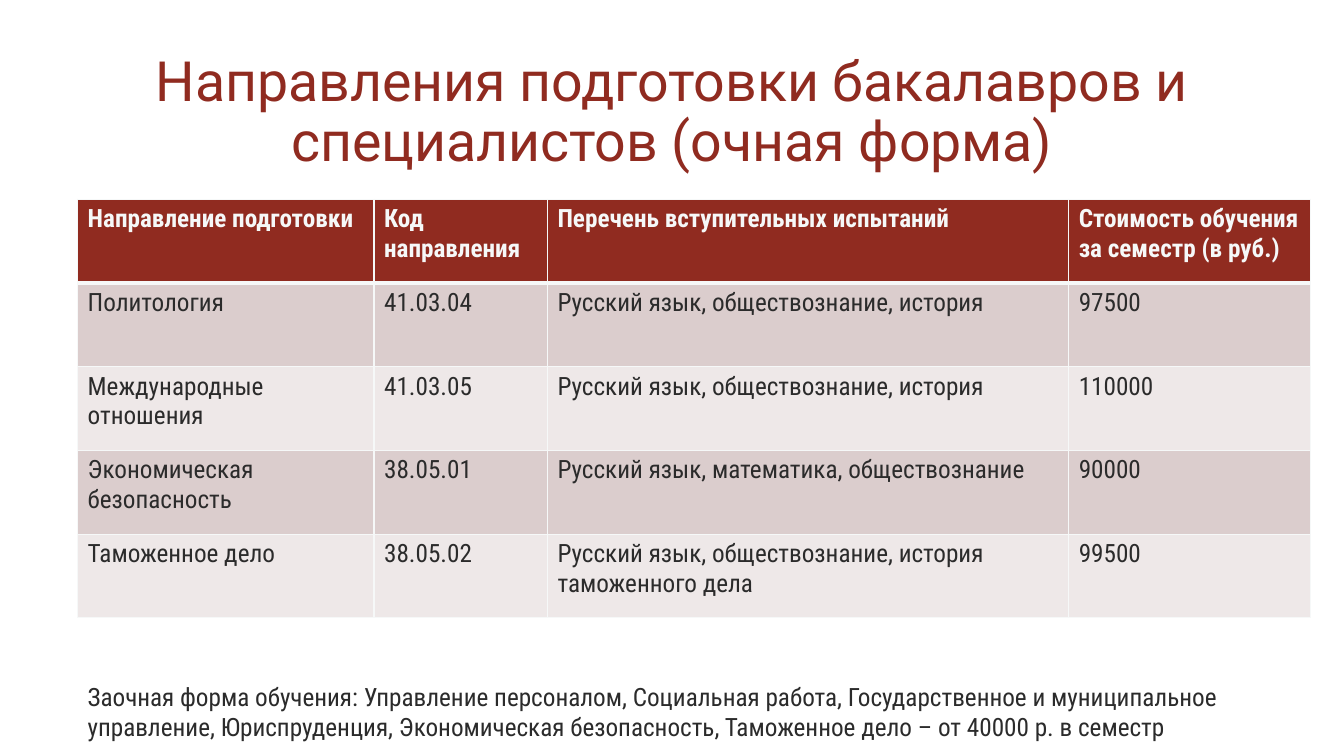
"""Builds the slide listing full-time degree programmes and their fees."""
import pptx
import pptx.dml.color
import pptx.enum.text
import pptx.oxml
import pptx.oxml.ns
import pptx.util

Inches = pptx.util.Inches
Pt = pptx.util.Pt

COLORS = {
    "accent": "902B20",
    "text": "2B2B2B",
    "light": "F6F8F8",
    "odd_row": "DBCDCD",
    "even_row": "EEE8E8",
}
TITLE_FONT = "Roboto"
BODY_FONT = "Roboto Condensed"

TITLE = "Направления подготовки бакалавров и специалистов (очная форма)"
PROGRAMMES = [
    ("Направление подготовки", "Код направления", "Перечень вступительных испытаний",
     "Стоимость обучения за семестр (в руб.)"),
    ("Политология", "41.03.04", "Русский язык, обществознание, история", "97500"),
    ("Международные отношения", "41.03.05", "Русский язык, обществознание, история", "110000"),
    ("Экономическая безопасность", "38.05.01", "Русский язык, математика, обществознание", "90000"),
    ("Таможенное дело", "38.05.02", "Русский язык, обществознание, история таможенного дела",
     "99500"),
]
COLUMN_WIDTHS = [2.94, 1.72, 5.17, 2.4]
ROW_HEIGHT = 0.83
CORRESPONDENCE_NOTE = [
    "Заочная форма обучения: Управление персоналом, Социальная работа, "
    "Государственное и муниципальное",
    "управление, Юриспруденция, Экономическая безопасность, "
    "Таможенное дело – от 40000 р. в семестр",
]


def rgb(name):
    return pptx.dml.color.RGBColor.from_string(COLORS[name])


def add_run(paragraph, text, color, size=18, font=BODY_FONT, bold=False):
    run = paragraph.add_run()
    run.text = text
    run.font.name = font
    run.font.size = Pt(size)
    run.font.bold = bold
    run.font.color.rgb = rgb(color)


def set_borders(cell, bottom_width):
    properties = cell._tc.get_or_add_tcPr()
    for side, width in (("L", 1), ("R", 1), ("T", 1), ("B", bottom_width)):
        properties.append(pptx.oxml.parse_xml(
            f'<a:ln{side} {pptx.oxml.ns.nsdecls("a")} w="{Pt(width)}"><a:solidFill>'
            f'<a:srgbClr val="{COLORS["light"]}"/></a:solidFill></a:ln{side}>'))


def add_title(slide):
    title = slide.shapes.title
    title.left, title.top = Inches(1), Inches(0.68)
    title.width, title.height = Inches(11.33), Inches(0.89)
    frame = title.text_frame
    frame.margin_left = frame.margin_right = frame.margin_top = frame.margin_bottom = 0
    frame.vertical_anchor = pptx.enum.text.MSO_ANCHOR.MIDDLE
    frame.auto_size = pptx.enum.text.MSO_AUTO_SIZE.NONE
    frame.word_wrap = True
    heading = frame.paragraphs[0]
    heading.alignment = pptx.enum.text.PP_ALIGN.CENTER
    heading.line_spacing = 0.9
    add_run(heading, TITLE, "accent", 39.6, TITLE_FONT)


def add_programme_table(slide):
    programmes = slide.shapes.add_table(
        len(PROGRAMMES), len(COLUMN_WIDTHS), Inches(0.77), Inches(1.98),
        Inches(sum(COLUMN_WIDTHS)), Inches(ROW_HEIGHT * len(PROGRAMMES))).table
    for column, width in zip(programmes.columns, COLUMN_WIDTHS):
        column.width = Inches(width)
    for row_index, values in enumerate(PROGRAMMES):
        programmes.rows[row_index].height = Inches(ROW_HEIGHT)
        header = row_index == 0
        background = "accent" if header else "odd_row" if row_index % 2 else "even_row"
        for column_index, value in enumerate(values):
            cell = programmes.cell(row_index, column_index)
            set_borders(cell, 3 if header else 1)
            cell.fill.solid()
            cell.fill.fore_color.rgb = rgb(background)
            add_run(cell.text_frame.paragraphs[0], value,
                    "light" if header else "text", bold=header)


def add_note(slide):
    note = slide.shapes.add_textbox(Inches(0.77), Inches(6.71), Inches(11.86), Inches(0.71))
    frame = note.text_frame
    frame.word_wrap = False
    frame.auto_size = pptx.enum.text.MSO_AUTO_SIZE.SHAPE_TO_FIT_TEXT
    for index, line in enumerate(CORRESPONDENCE_NOTE):
        paragraph = frame.add_paragraph() if index else frame.paragraphs[0]
        add_run(paragraph, line, "text")


def main():
    presentation = pptx.Presentation()
    presentation.slide_width = Inches(13.33)
    presentation.slide_height = Inches(7.5)
    slide = presentation.slides.add_slide(presentation.slide_layouts[5])
    add_title(slide)
    add_programme_table(slide)
    add_note(slide)
    presentation.save("out.pptx")


if __name__ == "__main__":
    main()
